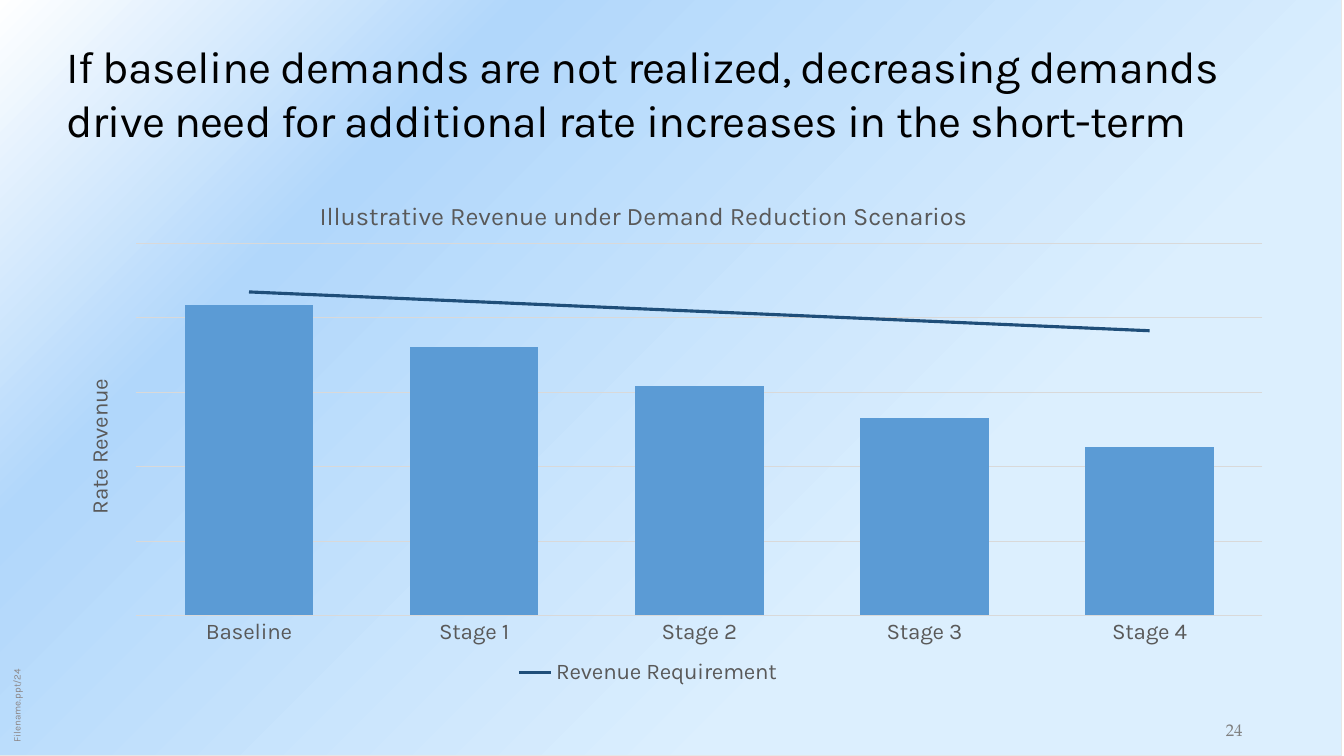
from dataclasses import dataclass

from pptx import Presentation
from pptx.chart.data import CategoryChartData
from pptx.dml.color import RGBColor
from pptx.enum.chart import XL_CHART_TYPE, XL_LEGEND_POSITION, XL_TICK_LABEL_POSITION, XL_TICK_MARK
from pptx.enum.shapes import MSO_SHAPE
from pptx.enum.text import MSO_ANCHOR, PP_ALIGN
from pptx.oxml import parse_xml
from pptx.oxml.ns import nsdecls, qn
from pptx.util import Cm, Pt

STACKED = XL_CHART_TYPE.COLUMN_STACKED
BELOW = XL_LEGEND_POSITION.BOTTOM
NO_LABEL = XL_TICK_LABEL_POSITION.NONE
NO_TICK = XL_TICK_MARK.NONE
RECT = MSO_SHAPE.RECTANGLE
LEFT, CENTER = PP_ALIGN.LEFT, PP_ALIGN.CENTER
MIDDLE, BOTTOM = MSO_ANCHOR.MIDDLE, MSO_ANCHOR.BOTTOM

FONT = "Karla"
COLORS = {
    "black": "000000", "label": "595959", "grid": "D9D9D9",
    "bar": "5B9BD5", "need": "1F4E79", "edge": "E7E6E6",
    "file": "8B8585", "page": "808080",
    "white": "FFFFFF", "sky": "B1D7FB", "pale": "DCEFFE",
}
FADE = ((0, "white"), (25, "sky"), (70, "pale"), (100, "pale"))
STAGES = ("Baseline", "Stage 1", "Stage 2", "Stage 3", "Stage 4")


@dataclass
class Series:
    name: str
    values: tuple


@dataclass
class Label:
    text: str
    box: tuple
    style: dict


SERIES = (
    Series("Series 1", (37, 35, 34, 33, 32)),
    Series("Series 2", (47, 40, 31, 24, 18)),
    Series("Series 3", (12, 8, 6, 4, 2)),
    Series("Revenue Requirement", (100, 97, 94, 91, 88)),
)
LABELS = (
    Label("Filename.ppt/24", (-2.97, 15.16, 6.78, 0.56),
          dict(size=7, color="file", turn=270)),
    Label("24", (29.95, 18.01, 2.31, 0.76),
          dict(size=12, color="page", font="TeX Gyre Pagella", align=CENTER)),
    Label("If baseline demands are not realized, decreasing demands drive need "
          "for additional rate increases in the short-term",
          (1.42, 0.84, 31.04, 2.97),
          dict(size=32, anchor=MIDDLE, inset=0.25, spacing=-50)),
)


def rgb(name: str) -> RGBColor:
    return RGBColor.from_string(COLORS[name])


def set_font(font, size: float, color: str, face: str = FONT) -> None:
    font.size = Pt(size)
    font.name = face
    font.bold = False
    font.color.rgb = rgb(color)


def set_line(line, color: str, width: float) -> None:
    line.color.rgb = rgb(color)
    line.width = Pt(width)


def add_text(slide, text: str, box: tuple, *, size: float, color: str = "black",
             font: str = FONT, align=LEFT, anchor=BOTTOM, inset: float = 0.13,
             turn: int = 0, spacing: int = 0) -> None:
    shape = slide.shapes.add_textbox(*map(Cm, box))
    shape.rotation = turn
    frame = shape.text_frame
    frame.word_wrap = True
    frame.vertical_anchor = anchor
    frame.margin_left = frame.margin_right = Cm(inset)
    frame.margin_top = frame.margin_bottom = Cm(0.13)
    para = frame.paragraphs[0]
    para.alignment = align
    run = para.add_run()
    run.text = text
    set_font(run.font, size, color, font)
    if spacing:
        run.font.element.set("spc", str(spacing)) if hasattr(run.font, "element") \
            else run._r.get_or_add_rPr().set("spc", str(spacing))


def add_back(slide) -> None:
    """Draw the diagonal fade behind everything."""
    back = slide.shapes.add_shape(RECT, Cm(-0.05), 0, Cm(33.87), Cm(19.05))
    back.shadow.inherit = False
    set_line(back.line, "edge", 0.75)
    back.fill.gradient()
    stops = "".join(
        f'<a:gs pos="{pos * 1000}"><a:srgbClr val="{COLORS[name]}"/></a:gs>'
        for pos, name in FADE)
    fade = parse_xml(f'<a:gradFill {nsdecls("a")} rotWithShape="1"><a:gsLst>{stops}'
                     '</a:gsLst><a:lin ang="2700000" scaled="0"/></a:gradFill>')
    old = back.element.spPr.find(qn("a:gradFill"))
    old.getparent().replace(old, fade)


def place(chart, query: str, **spots: float) -> None:
    """Give a chart part a fixed place, as fractions of the chart."""
    part = chart.element.xpath(query)[0]
    for old in part.findall(qn("c:layout")):
        part.remove(old)
    inner = '<c:layoutTarget val="inner"/>' if "w" in spots else ""
    sizes = "".join(f'<c:{key} val="{val}"/>' for key, val in spots.items())
    layout = parse_xml(
        f'<c:layout {nsdecls("c")}><c:manualLayout>{inner}<c:xMode val="edge"/>'
        f'<c:yMode val="edge"/>{sizes}</c:manualLayout></c:layout>')
    over = part.find(qn("c:overlay"))
    if over is None:
        part.insert(0, layout)
    else:
        over.addprevious(layout)


def split_line(chart) -> None:
    """Move the last series from the columns to a line plot."""
    bars = chart.element.xpath(".//c:barChart")[0]
    need = bars.findall(qn("c:ser"))[-1]
    for flag in need.findall(qn("c:invertIfNegative")):
        need.remove(flag)
    need.find(qn("c:spPr")).addnext(parse_xml(
        f'<c:marker {nsdecls("c")}><c:symbol val="none"/></c:marker>'))
    need.append(parse_xml(f'<c:smooth {nsdecls("c")} val="0"/>'))
    axes = "".join(f'<c:axId val="{axis.get("val")}"/>'
                   for axis in bars.findall(qn("c:axId")))
    plot = parse_xml(
        f'<c:lineChart {nsdecls("c")}><c:grouping val="standard"/>'
        f'<c:varyColors val="0"/><c:marker val="1"/>{axes}</c:lineChart>')
    plot.insert(2, need)
    bars.addnext(plot)


def add_title(owner, text: str, size: float) -> None:
    frame = owner.text_frame
    frame.text = text
    set_font(frame.paragraphs[0].runs[0].font, size, "label")


def add_legend(chart) -> None:
    chart.has_legend = True
    legend = chart.legend
    legend.position = BELOW
    legend.include_in_layout = False
    set_font(legend.font, 16, "label")
    mark = chart.element.xpath(".//c:legendPos")[0]
    for idx in reversed(range(len(SERIES) - 1)):
        mark.addnext(parse_xml(
            f'<c:legendEntry {nsdecls("c")}><c:idx val="{idx}"/>'
            '<c:delete val="1"/></c:legendEntry>'))


def add_graph(slide) -> None:
    data = CategoryChartData()
    data.categories = STAGES
    for item in SERIES:
        data.add_series(item.name, item.values)
    box = map(Cm, (1.42, 4.24, 31.04, 13.34))
    chart = slide.shapes.add_chart(STACKED, *box, data).chart
    set_font(chart.font, 16, "black")

    chart.has_title = True
    add_title(chart.chart_title, "Illustrative Revenue under Demand Reduction Scenarios", 18)
    plot = chart.plots[0]
    plot.gap_width, plot.overlap = 75, 100
    plot.vary_by_categories = False
    *bars, need = plot.series
    for bar in bars:
        bar.format.fill.solid()
        bar.format.fill.fore_color.rgb = rgb("bar")
    set_line(need.format.line, "need", 2.25)

    stage = chart.category_axis
    stage.major_tick_mark = NO_TICK
    set_font(stage.tick_labels.font, 16, "label")
    set_line(stage.format.line, "grid", 0.75)

    value = chart.value_axis
    value.minimum_scale, value.maximum_scale, value.major_unit = 0, 115, 23
    value.major_tick_mark = NO_TICK
    value.tick_label_position = NO_LABEL
    value.tick_labels.number_format = '"$"#,##0'
    value.tick_labels.number_format_is_linked = False
    value.format.line.fill.background()
    set_line(value.major_gridlines.format.line, "grid", 0.75)
    value.has_title = True
    add_title(value.axis_title, "Rate Revenue", 16)

    add_legend(chart)
    split_line(chart)
    place(chart, ".//c:plotArea", x=0.065, y=0.142, w=0.914, h=0.703)
    place(chart, "./c:chart/c:title", x=0.21, y=0.05)
    place(chart, ".//c:valAx/c:title", x=0.02, y=0.39)
    place(chart, ".//c:legend", x=0.37, y=0.92)


def main() -> None:
    deck = Presentation()
    deck.slide_width, deck.slide_height = Cm(33.87), Cm(19.05)
    slide = deck.slides.add_slide(deck.slide_layouts[6])
    add_back(slide)
    for label in LABELS:
        add_text(slide, label.text, label.box, **label.style)
    add_graph(slide)
    deck.save("out.pptx")


if __name__ == "__main__":
    main()
